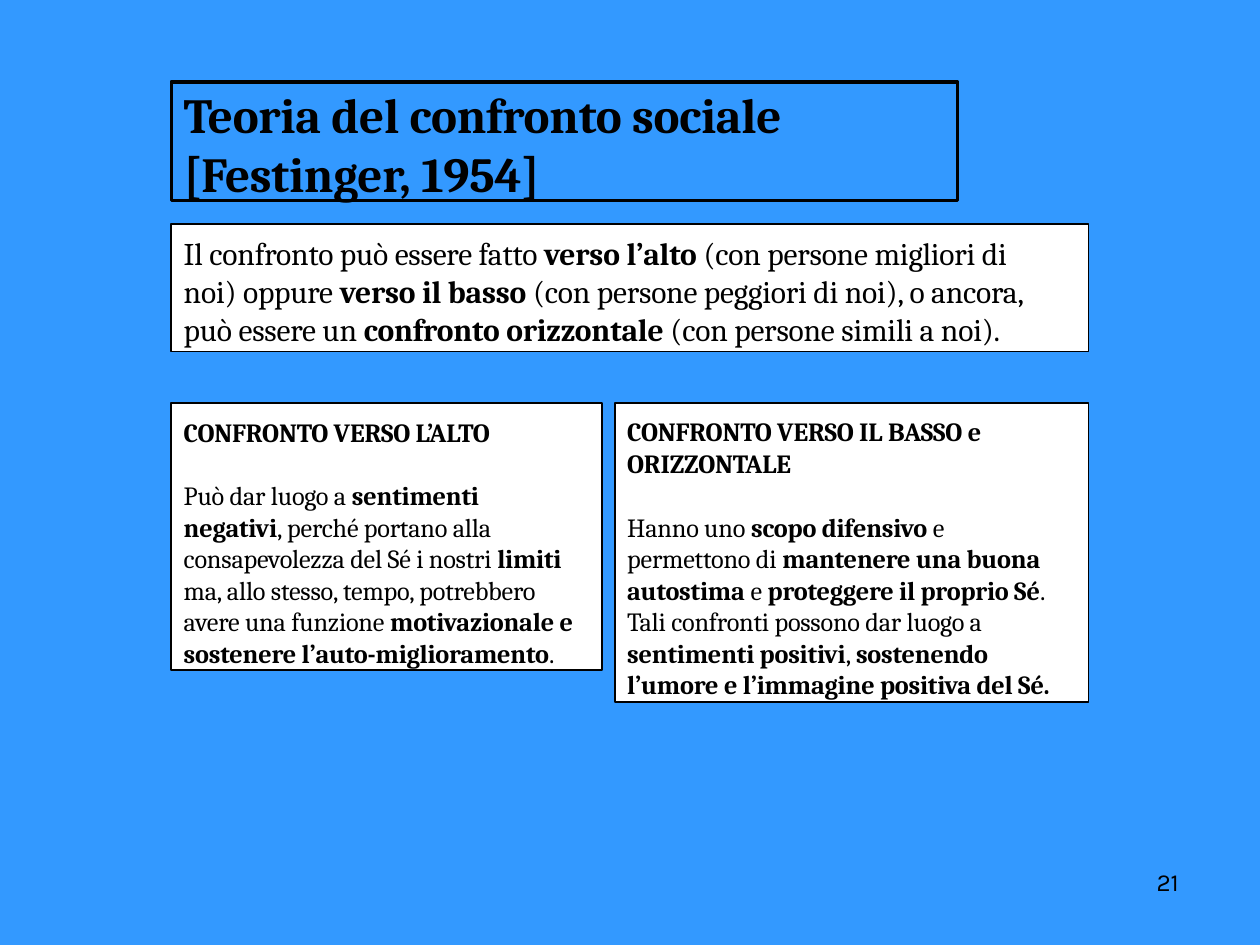
import pptx
import pptx.dml.color
import pptx.enum.shapes
import pptx.enum.text
import pptx.util

Inches, Pt = pptx.util.Inches, pptx.util.Pt

THEME = {
    "blue": "3399FF", "white": "FFFFFF", "black": "000000",
    "serif": "Cambria", "sans": "Karla",
    "title": 28, "intro": 18, "column": 15, "number": 14,
    "tracking": -0.1,
}

# Text between ** marks is bold.
TITLE = ["**Teoria del confronto sociale [Festinger, 1954]**"]
INTRO = [
    "Il confronto può essere fatto **verso l’alto** (con persone migliori di noi) oppure "
    "**verso il basso** (con persone peggiori di noi), o ancora, può essere un "
    "**confronto orizzontale** (con persone simili a noi)."
]
UPWARD = [
    "**CONFRONTO VERSO L’ALTO**",
    "Può dar luogo a **sentimenti\vnegativi**, perché portano alla consapevolezza del Sé "
    "i nostri **limiti** ma, allo stesso, tempo, potrebbero avere una funzione "
    "**motivazionale e sostenere l’auto-miglioramento**.",
]
DOWNWARD = [
    "**CONFRONTO VERSO IL BASSO e ORIZZONTALE**",
    "Hanno uno **scopo difensivo** e permettono di **mantenere una buona autostima** e "
    "**proteggere il proprio Sé**. Tali confronti possono dar luogo a "
    "**sentimenti positivi**, **sostenendo**",
    "**l’umore e l’immagine positiva del Sé.**",
]
PAGE_NUMBER = "21"

LEFT, RIGHT = 1.36, 8.64
COLUMN_TOP, COLUMN_GAP, UPWARD_WIDTH = 3.2, 0.1, 3.42
DOWNWARD_LEFT = LEFT + UPWARD_WIDTH + COLUMN_GAP

# text, (left, top, width, height), size, fill, line width, top inset, right inset
PANELS = [
    (TITLE, (LEFT, 0.65, 6.24, 0.94), "title", "blue", 2, 0.02, 0),
    (INTRO, (LEFT, 1.78, RIGHT - LEFT, 1.01), "intro", "white", 1, 0.08, 0.3),
    (UPWARD, (LEFT, COLUMN_TOP, UPWARD_WIDTH, 2.12), "column", "white", 1, 0.1, 0.1),
    (DOWNWARD, (DOWNWARD_LEFT, COLUMN_TOP, RIGHT - DOWNWARD_LEFT, 2.37),
     "column", "white", 1, 0.1, 0.2),
]


def color(name):
    return pptx.dml.color.RGBColor.from_string(THEME[name])


def set_margins(frame, left=0, top=0, right=0):
    frame.margin_left, frame.margin_top = Inches(left), Inches(top)
    frame.margin_right, frame.margin_bottom = Inches(right), 0
    frame.vertical_anchor = pptx.enum.text.MSO_ANCHOR.TOP


def style_span(span, face, size, bold=False):
    span.font.name = THEME[face]
    span.font.size = Pt(THEME[size])
    span.font.bold = bold
    span.font.color.rgb = color("black")
    span._r.get_or_add_rPr().set("spc", str(round(THEME["tracking"] * 100)))


def write_marked(para, text, size):
    """Write text into para, with the parts between ** marks in bold."""
    for index, part in enumerate(text.split("**")):
        for line_index, line in enumerate(part.split("\v")):
            if line_index:
                para.add_line_break()
            if line:
                span = para.add_run()
                span.text = line
                style_span(span, "serif", size, bold=index % 2 == 1)


def add_panel(page, texts, place, size, fill, line_width, top, right):
    box = page.shapes.add_shape(
        pptx.enum.shapes.MSO_SHAPE.RECTANGLE, *map(Inches, place))
    box.shadow.inherit = False
    box.fill.solid()
    box.fill.fore_color.rgb = color(fill)
    box.line.color.rgb = color("black")
    box.line.width = Pt(line_width)
    frame = box.text_frame
    frame.word_wrap = True
    set_margins(frame, 0.1, top, right)
    for index, text in enumerate(texts):
        para = frame.add_paragraph() if index else frame.paragraphs[0]
        para.alignment = pptx.enum.text.PP_ALIGN.LEFT
        if index == 1:
            para.space_before = Pt(18.4)
        if size == "title":
            para.line_spacing = Pt(33.6)
        write_marked(para, text, size)


def add_page_number(page):
    box = page.shapes.add_textbox(*map(Inches, (9.17, 6.86, 0.24, 0.26)))
    box.text_frame.word_wrap = True
    set_margins(box.text_frame, 0.01, 0.02)
    para = box.text_frame.paragraphs[0]
    para.text = PAGE_NUMBER
    style_span(para.runs[0], "sans", "number")


def main():
    deck = pptx.Presentation()
    deck.slide_width, deck.slide_height = Inches(10), Inches(7.5)
    page = deck.slides.add_slide(deck.slide_layouts[6])
    page.background.fill.solid()
    page.background.fill.fore_color.rgb = color("blue")
    add_page_number(page)
    for panel in PANELS:
        add_panel(page, *panel)
    deck.save("out.pptx")


if __name__ == "__main__":
    main()
